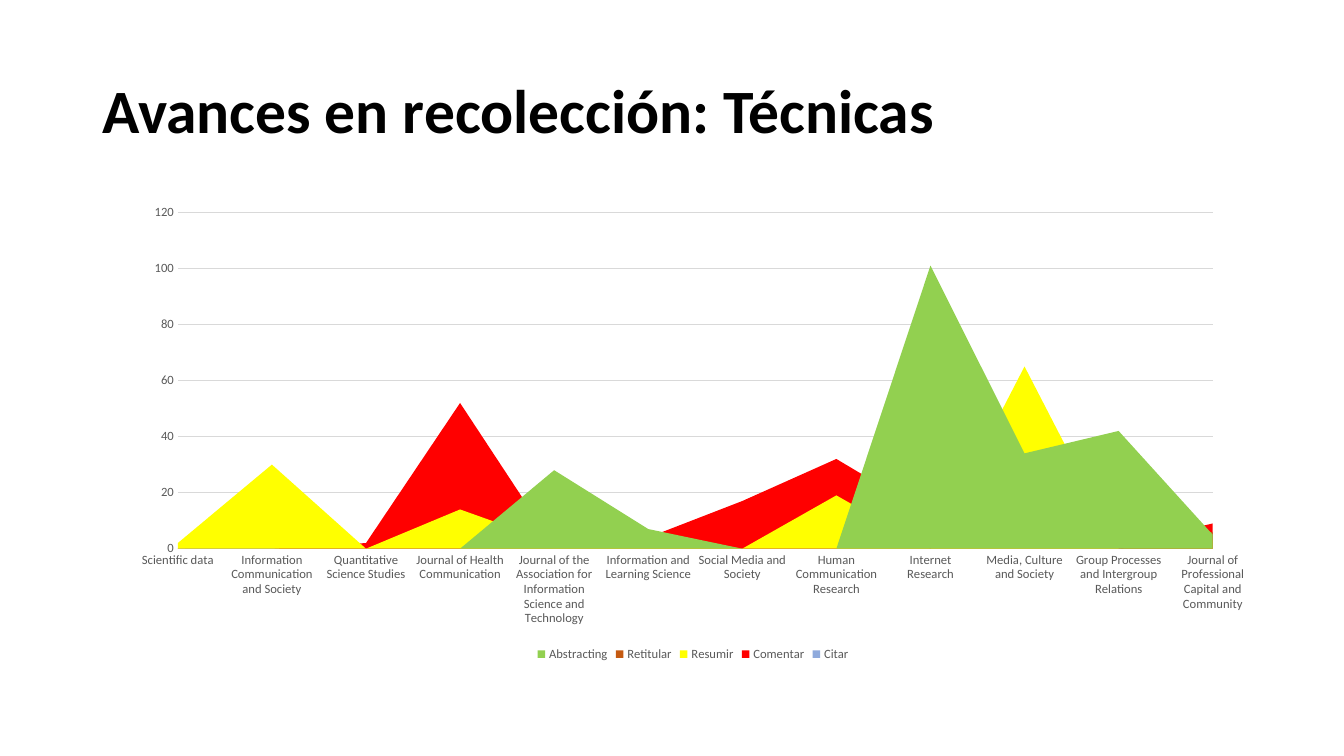
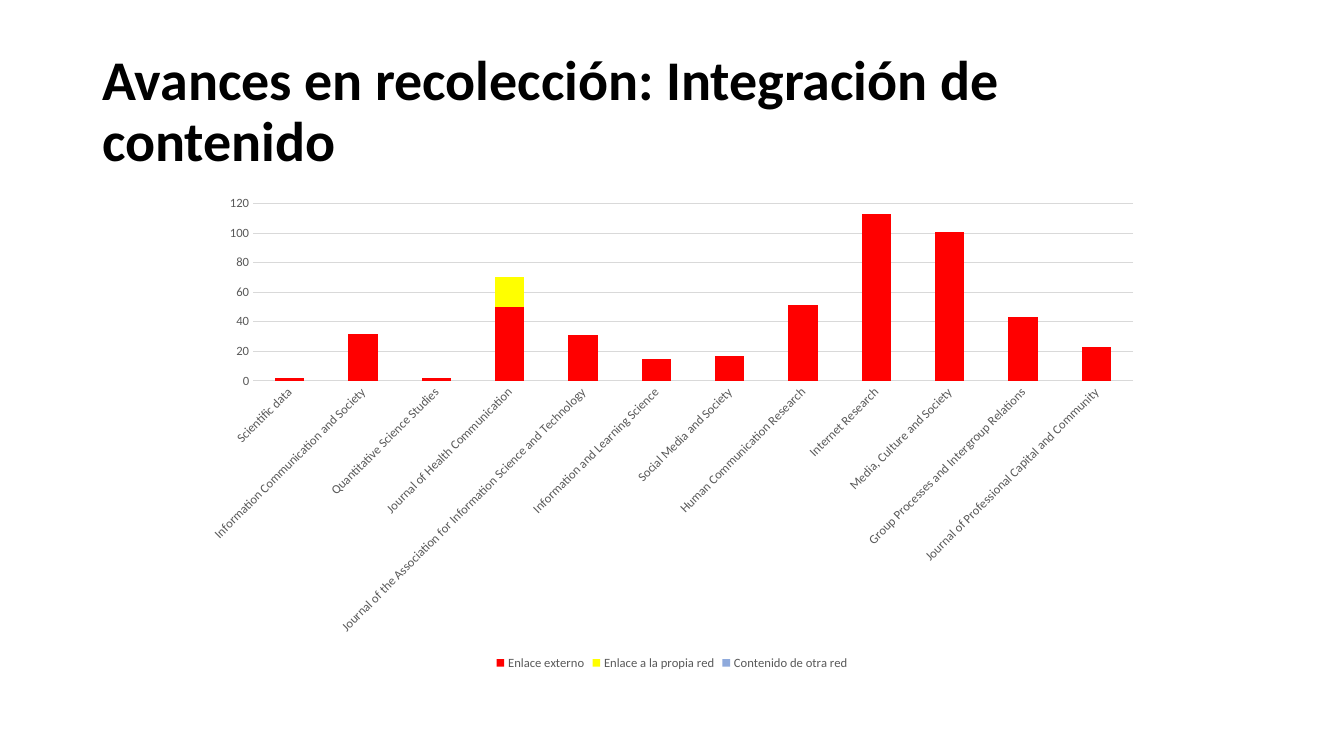
from dataclasses import dataclass

from pptx import Presentation
from pptx.chart.data import CategoryChartData
from pptx.dml.color import RGBColor
from pptx.enum.chart import XL_CHART_TYPE, XL_LEGEND_POSITION, XL_TICK_MARK
from pptx.enum.text import MSO_ANCHOR
from pptx.util import Cm, Pt

AREA = XL_CHART_TYPE.AREA
STACKED = XL_CHART_TYPE.COLUMN_STACKED
BOTTOM = XL_LEGEND_POSITION.BOTTOM
NO_TICK = XL_TICK_MARK.NONE
MIDDLE = MSO_ANCHOR.MIDDLE

# Shared style
FONT = "Calibri"
BLACK, GREY, RULE = "000000", "595959", "D9D9D9"
GREEN, ORANGE, YELLOW, RED, BLUE = "92D050", "C55A11", "FFFF00", "FF0000", "8FAADC"
TITLE_BOX = (2.33, 1.01, 29.21, 3.68)

JOURNALS = [
    "Scientific data",
    "Information Communication and Society",
    "Quantitative Science Studies",
    "Journal of Health Communication",
    "Journal of the Association for Information Science and Technology",
    "Information and Learning Science",
    "Social Media and Society",
    "Human Communication Research",
    "Internet Research",
    "Media, Culture and Society",
    "Group Processes and Intergroup Relations",
    "Journal of Professional Capital and Community",
]


@dataclass
class Series:
    name: str
    color: str
    values: list[int]


@dataclass
class ChartSlide:
    title: str
    title_size: int
    kind: XL_CHART_TYPE
    box: tuple[float, float, float, float]
    label_angle: int
    series: list[Series]


SLIDES = [
    ChartSlide("Avances en recolección: Técnicas", 44, AREA,
               (3, 4.93, 28.93, 11.84), 0, [
        Series("Abstracting", GREEN, [0, 0, 0, 0, 28, 7, 0, 0, 101, 34, 42, 5]),
        Series("Retitular", ORANGE, [0] * 11 + [6]),
        Series("Resumir", YELLOW, [2, 30, 0, 14, 2, 4, 0, 19, 0, 65, 0, 3]),
        Series("Comentar", RED, [0, 0, 2, 52, 1, 4, 17, 32, 12, 2, 1, 9]),
        Series("Citar", BLUE, [0, 2, 0, 5] + [0] * 8),
    ]),
    ChartSlide("Avances en recolección: Integración de contenido", 40, STACKED,
               (4.83, 4.7, 24.21, 12.29), -45, [
        Series("Enlace externo", RED, [2, 32, 2, 50, 31, 15, 17, 51, 113, 101, 43, 23]),
        Series("Enlace a la propia red", YELLOW, [0, 0, 0, 20] + [0] * 8),
        Series("Contenido de otra red", BLUE, [0] * 12),
    ]),
]


def rgb(color: str) -> RGBColor:
    return RGBColor.from_string(color)


def style_font(font, size: float, color: str, bold: bool = False) -> None:
    font.name, font.size, font.bold = FONT, Pt(size), bold
    font.color.rgb = rgb(color)


def style_line(line, color: str) -> None:
    line.color.rgb = rgb(color)
    line.width = Pt(0.75)


def add_title(slide, text: str, size: int) -> None:
    tf = slide.shapes.add_textbox(*map(Cm, TITLE_BOX)).text_frame
    tf.word_wrap = True
    tf.vertical_anchor = MIDDLE
    tf.text = text
    p = tf.paragraphs[0]
    p.line_spacing = 0.9
    style_font(p.runs[0].font, size, BLACK, bold=True)


def add_chart(slide, item: ChartSlide) -> None:
    data = CategoryChartData()
    data.categories = JOURNALS
    for series in item.series:
        data.add_series(series.name, series.values)
    chart = slide.shapes.add_chart(item.kind, *map(Cm, item.box), data).chart
    chart.has_title = False
    style_font(chart.font, 10, BLACK)

    # Legend
    chart.has_legend = True
    chart.legend.position = BOTTOM
    chart.legend.include_in_layout = False
    style_font(chart.legend.font, 9, GREY)

    # Axes
    cat, val = chart.category_axis, chart.value_axis
    for axis in (cat, val):
        axis.major_tick_mark = axis.minor_tick_mark = NO_TICK
        style_font(axis.tick_labels.font, 9, GREY)
    cat.has_major_gridlines = False
    style_line(cat.format.line, RULE)
    val.has_major_gridlines = True
    style_line(val.major_gridlines.format.line, RULE)
    val.format.line.fill.background()
    val.minimum_scale, val.maximum_scale, val.major_unit = 0, 120, 20
    for body in chart.element.xpath(".//c:catAx/c:txPr/a:bodyPr"):
        body.set("rot", str(item.label_angle * 60000))

    # Series
    plot = chart.plots[0]
    plot.vary_by_categories = False
    if item.kind == STACKED:
        plot.gap_width, plot.overlap = 150, 100
    for drawn, series in zip(plot.series, item.series):
        drawn.format.fill.solid()
        drawn.format.fill.fore_color.rgb = rgb(series.color)
        drawn.format.line.fill.background()


def main() -> None:
    prs = Presentation()
    prs.slide_width, prs.slide_height = Cm(33.87), Cm(19.05)
    for item in SLIDES:
        s = prs.slides.add_slide(prs.slide_layouts[6])
        add_title(s, item.title, item.title_size)
        add_chart(s, item)
    prs.save("out.pptx")


if __name__ == "__main__":
    main()
